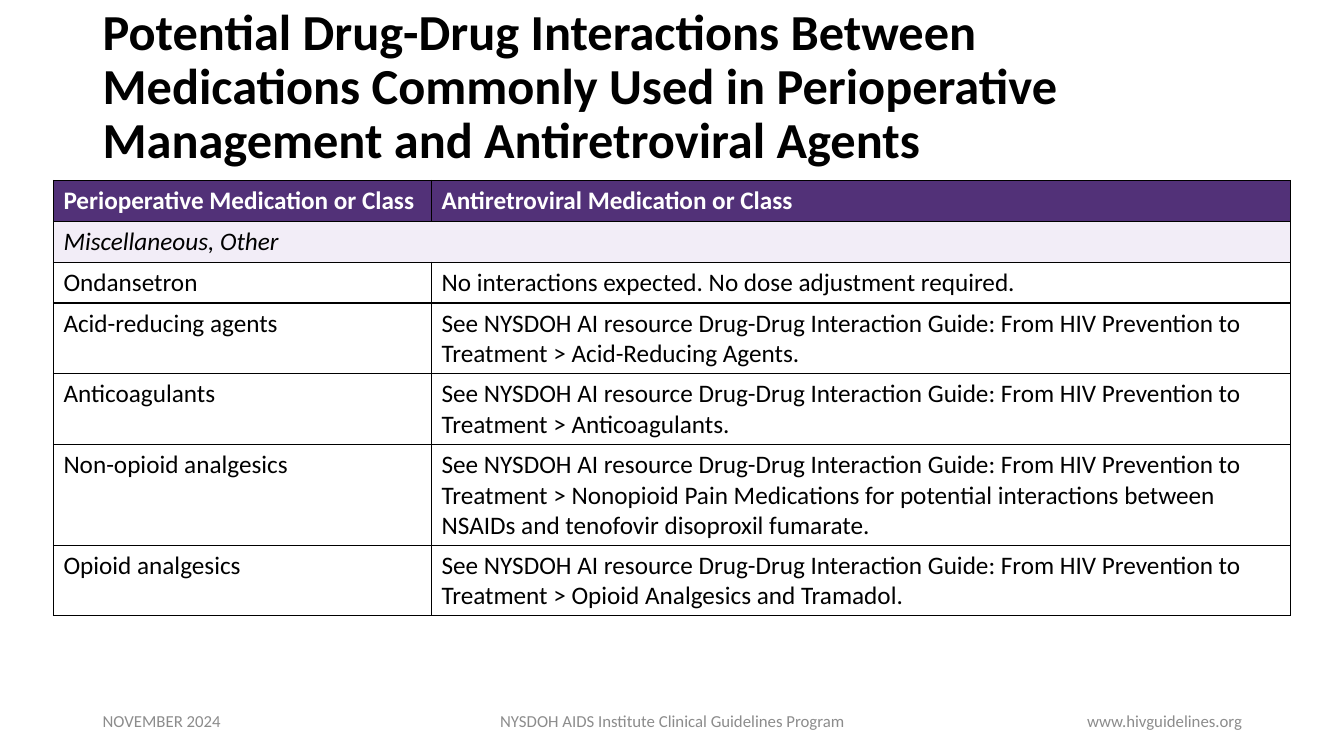
from pptx import Presentation
from pptx.dml.color import RGBColor
from pptx.enum.text import MSO_ANCHOR, PP_ALIGN
from pptx.oxml import parse_xml
from pptx.oxml.ns import nsdecls
from pptx.util import Emu, Pt

PX = 9144  # 100 px to the inch
FONT = "Calibri"
BLACK, WHITE, GRAY = "000000", "FFFFFF", "8C8C8C"
PURPLE, LILAC = "523178", "F2EDF7"

TITLE = ("Potential Drug-Drug Interactions Between Medications Commonly Used "
         "in Perioperative Management and Antiretroviral Agents")
GUIDE = ("See NYSDOH AI resource Drug-Drug Interaction Guide: "
         "From HIV Prevention to Treatment > ")
HEADS = ("Perioperative Medication or Class", "Antiretroviral Medication or Class")
GROUP = "Miscellaneous, Other"
DRUGS = [
    ("Ondansetron", "No interactions expected. No dose adjustment required."),
    ("Acid-reducing agents", GUIDE + "Acid-Reducing Agents."),
    ("Anticoagulants", GUIDE + "Anticoagulants."),
    ("Non-opioid analgesics",
     GUIDE + "Nonopioid Pain Medications for potential interactions between "
     "NSAIDs and tenofovir disoproxil fumarate."),
    ("Opioid analgesics", GUIDE + "Opioid Analgesics and Tramadol."),
]


def px(*nums):
    return [Emu(n * PX) for n in nums]


def color(code):
    return RGBColor.from_string(code)


def style(para, size, code, bold=False, italic=False):
    font = para.font
    font.name, font.size = FONT, Pt(size)
    font.bold, font.italic = bold, italic
    font.color.rgb = color(code)


def label(slide, box, text, size, code, align=PP_ALIGN.LEFT, bold=False):
    frame = slide.shapes.add_textbox(*px(*box)).text_frame
    frame.word_wrap = True
    frame.vertical_anchor = MSO_ANCHOR.MIDDLE
    para = frame.paragraphs[0]
    para.text, para.alignment = text, align
    style(para, size, code, bold)
    return para


def border(cell):
    props = cell._tc.get_or_add_tcPr()
    for side in "LRTB":
        props.append(parse_xml(
            f'<a:ln{side} {nsdecls("a")} w="12700"><a:solidFill>'
            f'<a:srgbClr val="{BLACK}"/></a:solidFill></a:ln{side}>'))


def fill_cell(cell, text, back, code=BLACK, bold=False, italic=False):
    border(cell)
    cell.fill.solid()
    cell.fill.fore_color.rgb = color(back)
    para = cell.text_frame.paragraphs[0]
    para.text = text
    style(para, 18, code, bold, italic)


def drug_table(slide, box):
    rows = [HEADS, (GROUP, ""), *DRUGS]
    looks = {0: (PURPLE, WHITE, True, False), 1: (LILAC, BLACK, False, True)}
    left, top, width, height = box
    first = 375
    table = slide.shapes.add_table(len(rows), 2, *px(*box)).table
    for col, span in zip(table.columns, px(first, width - first)):
        col.width = span
    for r, texts in enumerate(rows):
        table.rows[r].height = Emu(height * PX // len(rows))
        for c, text in enumerate(texts):
            fill_cell(table.cell(r, c), text, *looks.get(r, (WHITE,)))
    table.cell(0, 1).vertical_anchor = MSO_ANCHOR.BOTTOM
    table.cell(1, 0).merge(table.cell(1, 1))


def footer(slide, box):
    left, top, width, height = box
    side, mid = 300, 450
    parts = [
        (left, side, "NOVEMBER 2024", PP_ALIGN.LEFT),
        (left + (width - mid) // 2, mid,
         "NYSDOH AIDS Institute Clinical Guidelines Program", PP_ALIGN.CENTER),
        (left + width - side, side, "www.hivguidelines.org", PP_ALIGN.RIGHT),
    ]
    for x, wide, text, align in parts:
        label(slide, (x, top, wide, height), text, 12, GRAY, align)


def main():
    deck = Presentation()
    deck.slide_width, deck.slide_height = px(1333, 750)
    slide = deck.slides.add_slide(deck.slide_layouts[6])
    title = label(slide, (92, 15, 1063, 145), TITLE, 36, BLACK, bold=True)
    title.line_spacing = 0.9
    drug_table(slide, (53, 179, 1227, 284))
    footer(slide, (92, 695, 1150, 40))
    deck.save("out.pptx")


if __name__ == "__main__":
    main()
